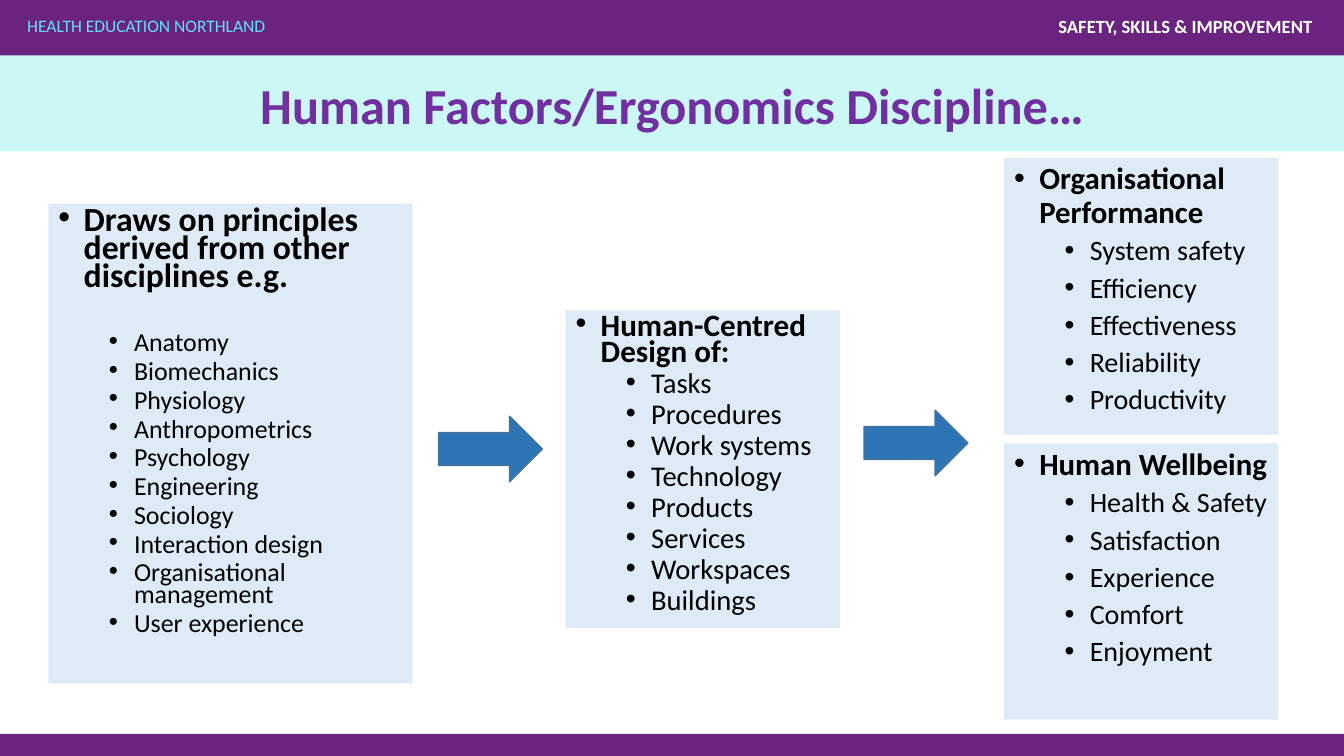
from dataclasses import dataclass

from lxml.etree import SubElement
from pptx import Presentation
from pptx.dml.color import RGBColor
from pptx.enum.shapes import MSO_SHAPE
from pptx.enum.text import MSO_ANCHOR, MSO_AUTO_SIZE, PP_ALIGN
from pptx.oxml.ns import qn
from pptx.shapes.autoshape import Shape
from pptx.slide import Slide
from pptx.text.text import TextFrame
from pptx.util import Inches, Pt

PURPLE = RGBColor(0x6A, 0x24, 0x80)
TITLE_PURPLE = RGBColor(0x70, 0x30, 0xA0)
AQUA = RGBColor(0xCB, 0xF7, 0xF4)
CYAN = RGBColor(0x66, 0xDC, 0xFF)
PALE_BLUE = RGBColor(0xDE, 0xEB, 0xF7)
ARROW_BLUE = RGBColor(0x2E, 0x75, 0xB6)
ARROW_EDGE = RGBColor(0x43, 0x73, 0x9E)
WHITE = RGBColor(0xFF, 0xFF, 0xFF)
BLACK = RGBColor(0, 0, 0)
FONT = "Calibri"


@dataclass(frozen=True)
class Box:
    left: float
    top: float
    width: float
    height: float


@dataclass(frozen=True)
class Band:
    box: Box
    color: RGBColor


@dataclass(frozen=True)
class Label:
    box: Box
    text: str
    size: float
    color: RGBColor
    bold: bool
    alignment: PP_ALIGN


@dataclass(frozen=True)
class Panel:
    box: Box
    heading: str
    items: tuple[str, ...]
    heading_size: float
    item_size: float
    line_spacing: float
    first_item_gap: float = 5


BANDS = (
    Band(Box(0, -0.02, 13.33, 1.52), AQUA),
    Band(Box(0, -0.02, 13.33, 0.57), PURPLE),
    Band(Box(0, 7.28, 13.33, 0.23), PURPLE),
)
LABELS = (
    Label(Box(0.27, 0.15, 5.47, 0.21), "HEALTH EDUCATION NORTHLAND",
          12.5, CYAN, False, PP_ALIGN.LEFT),
    Label(Box(7.05, 0.15, 5.97, 0.22), "SAFETY, SKILLS & IMPROVEMENT",
          13.3, WHITE, True, PP_ALIGN.RIGHT),
)
TITLE = Label(Box(0.92, 0.35, 11.5, 1.45), "Human Factors/Ergonomics Discipline…",
              36, TITLE_PURPLE, True, PP_ALIGN.CENTER)
PRINCIPLES = Panel(
    Box(0.48, 2.02, 3.61, 4.76),
    "Draws on principles derived from other disciplines e.g.",
    ("Anatomy", "Biomechanics", "Physiology", "Anthropometrics", "Psychology",
     "Engineering", "Sociology", "Interaction design",
     "Organisational management", "User experience"),
    24.1, 18.5, 0.7, 29,
)
PANELS = (
    Panel(Box(5.61, 3.08, 2.72, 3.15), "Human-Centred Design of:",
          ("Tasks", "Procedures", "Work systems", "Technology", "Products",
           "Services", "Workspaces", "Buildings"), 22.2, 20.4, 0.7),
    Panel(Box(9.96, 1.57, 2.72, 2.74), "Organisational Performance",
          ("System safety", "Efficiency", "Effectiveness", "Reliability",
           "Productivity"), 22, 20, 0.9),
    Panel(Box(9.96, 4.4, 2.72, 2.74), "Human Wellbeing",
          ("Health & Safety", "Satisfaction", "Experience", "Comfort",
           "Enjoyment"), 22, 20, 0.9),
)
ARROWS = (Box(4.35, 4.13, 1.03, 0.65), Box(8.57, 4.07, 1.03, 0.65))


def apply_format(target: object, values: dict[str, object]) -> None:
    for name, value in values.items():
        setattr(target, name, value)


def lengths(box: Box) -> tuple[int, ...]:
    return tuple(Inches(value) for value in (box.left, box.top, box.width, box.height))


def place(shape: Shape, box: Box) -> None:
    apply_format(shape, dict(zip(("left", "top", "width", "height"), lengths(box))))


def add_filled(slide: Slide, kind: MSO_SHAPE, box: Box, color: RGBColor) -> Shape:
    shape = slide.shapes.add_shape(kind, *lengths(box))
    shape.shadow.inherit = False
    shape.fill.solid()
    shape.fill.fore_color.rgb = color
    shape.line.fill.background()
    return shape


def write_text(frame: TextFrame, text: str, size: float, color: RGBColor,
               bold: bool, paragraph_format: dict[str, object], first: bool = True):
    paragraph = frame.paragraphs[0] if first else frame.add_paragraph()
    apply_format(paragraph, paragraph_format)
    run = paragraph.add_run()
    run.text = text
    apply_format(run.font, {"name": FONT, "size": Pt(size), "bold": bold})
    run.font.color.rgb = color
    return paragraph


def write_label(shape: Shape, label: Label, line_spacing: float) -> None:
    write_text(shape.text_frame, label.text, label.size, label.color, label.bold,
               {"alignment": label.alignment, "line_spacing": line_spacing})


def add_label(slide: Slide, label: Label) -> None:
    shape = slide.shapes.add_textbox(*lengths(label.box))
    apply_format(shape.text_frame, {
        "word_wrap": True, "margin_left": 0, "margin_right": 0,
        "margin_top": 0, "margin_bottom": 0,
    })
    write_label(shape, label, 1.0)


def fill_panel(shape: Shape, panel: Panel) -> None:
    shape.fill.solid()
    shape.fill.fore_color.rgb = PALE_BLUE
    frame = shape.text_frame
    apply_format(frame, {"word_wrap": True, "auto_size": MSO_AUTO_SIZE.NONE,
                         "vertical_anchor": MSO_ANCHOR.TOP})
    for index, text in enumerate((panel.heading, *panel.items)):
        is_heading = index == 0
        gap = {0: 10, 1: panel.first_item_gap}.get(index, 5)
        size = panel.heading_size if is_heading else panel.item_size
        paragraph = write_text(frame, text, size, BLACK, is_heading, {
            "level": 0 if is_heading else 1,
            "alignment": PP_ALIGN.LEFT,
            "line_spacing": panel.line_spacing,
            "space_before": Pt(gap),
            "space_after": Pt(0),
        }, is_heading)
        properties = paragraph._p.get_or_add_pPr()
        properties.set("marL", str(Inches(0.25 if is_heading else 0.75)))
        properties.set("indent", str(Inches(-0.25)))
        SubElement(properties, qn("a:buFont")).set("typeface", "Arial")
        SubElement(properties, qn("a:buChar")).set("char", "•")


def main() -> None:
    presentation = Presentation()
    presentation.slide_width = Inches(13.33)
    presentation.slide_height = Inches(7.5)
    slide = presentation.slides.add_slide(presentation.slide_layouts[1])
    title, body = slide.placeholders

    for band in BANDS:
        add_filled(slide, MSO_SHAPE.RECTANGLE, band.box, band.color)
    for label in LABELS:
        add_label(slide, label)

    for placeholder in (title, body):
        slide.shapes.element.append(placeholder._element)
    place(title, TITLE.box)
    apply_format(title.text_frame, {"vertical_anchor": MSO_ANCHOR.MIDDLE,
                                    "auto_size": MSO_AUTO_SIZE.NONE})
    write_label(title, TITLE, 0.9)
    place(body, PRINCIPLES.box)
    fill_panel(body, PRINCIPLES)

    for panel in PANELS:
        fill_panel(slide.shapes.add_textbox(*lengths(panel.box)), panel)
    for box in ARROWS:
        arrow = add_filled(slide, MSO_SHAPE.RIGHT_ARROW, box, ARROW_BLUE)
        arrow.line.color.rgb = ARROW_EDGE
        arrow.line.width = Pt(1)

    presentation.save("out.pptx")


if __name__ == "__main__":
    main()
